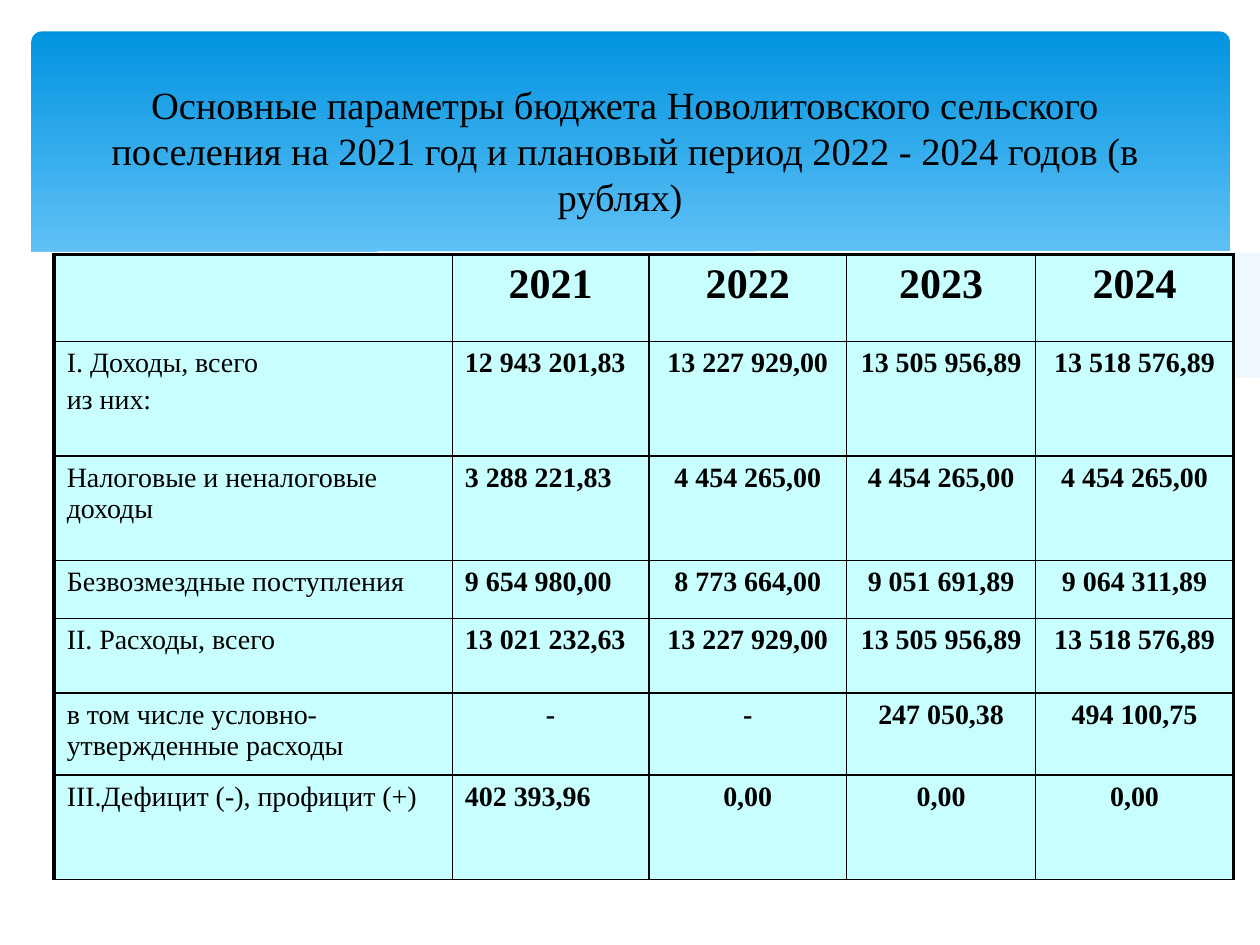
"""Build the budget parameters slide on a grid of 10 columns by 7.5 rows."""
from lxml.etree import SubElement
from pptx import Presentation
from pptx.dml.color import RGBColor
from pptx.enum.shapes import MSO_SHAPE as Shape
from pptx.enum.text import MSO_ANCHOR as Anchor, PP_ALIGN as Align
from pptx.oxml import parse_xml
from pptx.oxml.ns import nsdecls, qn
from pptx.util import Inches, Pt

COLUMNS, ROWS = 10, 7.5
UNIT = Inches(1)
FONT = "Times New Roman"
BLACK = RGBColor(0x00, 0x00, 0x00)
WHITE = RGBColor(0xFF, 0xFF, 0xFF)
SKY_TOP = RGBColor(0x02, 0x93, 0xE0)
SKY_BOTTOM = RGBColor(0x83, 0xD3, 0xFE)
WAVE_TINT = RGBColor(0xC6, 0xE7, 0xFC)
CELL_TINT = RGBColor(0xC8, 0xFE, 0xFD)
THIN, THICK = 1, 2.25

TITLE = ("Основные параметры бюджета Новолитовского сельского поселения "
         "на 2021 год и плановый период 2022 - 2024 годов (в рублях) ")
COLUMN_WIDTHS = [3.16, 1.56, 1.57, 1.5, 1.57]
ROW_HEIGHTS = [0.69, 0.91, 0.83, 0.46, 0.59, 0.65, 0.83]
BUDGET = [
    ["", "2021", "2022", "2023", "2024"],
    ["I. Доходы, всего\nиз них:", "12 943 201,83", "13 227 929,00",
     "13 505 956,89", "13 518 576,89"],
    ["Налоговые и неналоговые доходы", "3 288 221,83", "4 454 265,00",
     "4 454 265,00", "4 454 265,00"],
    ["Безвозмездные поступления", "9 654 980,00", "8 773 664,00",
     "9 051 691,89", "9 064 311,89"],
    ["II. Расходы, всего", "13 021 232,63", "13 227 929,00",
     "13 505 956,89", "13 518 576,89"],
    ["в том числе условно-утвержденные расходы", "-", "-",
     "247 050,38", "494 100,75"],
    ["III.Дефицит (-), профицит (+)", "402 393,96", "0,00", "0,00", "0,00"],
]

RIGHT_WAVE = [
    [(9.76, 2), (9.35, 2.07), (8.61, 2.23), (7.53, 2.48), (6.61, 2.65)],
    [(6.61, 2.65), (7.19, 2.72), (7.81, 2.77), (8.35, 2.77), (8.89, 2.72),
     (9.35, 2.62), (9.76, 2.47)],
]
MIDDLE_WAVE = [
    [(8.93, 2.73), (8.07, 2.6), (7.06, 2.4), (6.29, 2.22), (5.55, 2.05),
     (4.89, 1.94), (4.2, 1.87), (3.61, 1.85), (2.86, 1.91)],
    [(2.86, 1.91), (3.62, 2.03), (4.49, 2.22), (5.66, 2.48), (6.5, 2.64),
     (7.22, 2.74), (7.96, 2.78), (8.48, 2.77), (8.93, 2.73)],
]
LONG_CREST = [[(3.09, 1.95), (3.53, 1.89), (4.16, 1.87), (4.89, 1.9),
               (5.82, 2), (6.65, 2.13), (7.6, 2.33), (9.07, 2.72)]]
SHORT_CREST = [[(6.13, 2.57), (6.95, 2.35), (8.06, 2.1), (8.95, 1.94),
                (9.75, 1.85)]]
WHITE_WAVE = [
    [(9.77, 2.46), (9.2, 2.65), (8.63, 2.74), (8.09, 2.77), (7.44, 2.74),
     (6.68, 2.65), (5.79, 2.5), (4.47, 2.2), (3.65, 2.02), (2.92, 1.9),
     (2.3, 1.85), (1.77, 1.84), (1.19, 1.87), (0.76, 1.95), (0.4, 2.05),
     (0.23, 2.13)],
    [(0.23, 3.29), (9.77, 3.29)],
]


def grid(count):
    """Return the length of a number of grid columns or rows."""
    return round(count * UNIT)


def smooth_curve(knots, steps=5):
    """Return points on a Catmull-Rom curve through the knots."""
    if len(knots) < 3:
        return knots
    padded = [knots[0], *knots, knots[-1]]
    points = []
    for a, b, c, d in zip(padded, padded[1:], padded[2:], padded[3:]):
        for t in (step / steps for step in range(steps)):
            points.append(tuple(
                b[i] + 0.5 * t * (c[i] - a[i] + t * (
                    2 * a[i] - 5 * b[i] + 4 * c[i] - d[i]
                    + t * (3 * (b[i] - c[i]) + d[i] - a[i])))
                for i in (0, 1)))
    return points + [knots[-1]]


def add_wave(page, curves, fill=None, alpha=100):
    """Draw a filled wave, or a hairline crest when no fill is given."""
    points = [point for curve in curves for point in smooth_curve(curve)]
    builder = page.shapes.build_freeform(*points[0], scale=UNIT)
    builder.add_line_segments(points[1:], close=fill is not None)
    wave = builder.convert_to_shape()
    wave.shadow.inherit = False
    if fill is None:
        wave.fill.background()
        wave.line.color.rgb = WHITE
        wave.line.width = Pt(0)
        return
    wave.line.fill.background()
    wave.fill.solid()
    wave.fill.fore_color.rgb = fill
    if alpha < 100:
        color = wave.fill._xPr.find(".//" + qn("a:srgbClr"))
        SubElement(color, qn("a:alpha"), val=str(alpha * 1000))


def add_sky(page):
    """Draw the rounded panel with its vertical gradient."""
    sky = page.shapes.add_shape(Shape.ROUNDED_RECTANGLE, grid(0.25), grid(0.25),
                                grid(9.51), grid(2.7))
    sky.adjustments[0] = 0.03
    sky.shadow.inherit = False
    sky.line.fill.background()
    sky.fill.gradient()
    sky.fill.gradient_angle = 270
    for stop, color, place in zip(sky.fill.gradient_stops,
                                  (SKY_TOP, SKY_BOTTOM), (0, 0.9)):
        stop.color.rgb = color
        stop.position = place


def style_text(frame, size, bold, align):
    """Format every paragraph and run of a text frame."""
    for para in frame.paragraphs:
        para.alignment = align
        for span in para.runs:
            span.font.name = FONT
            span.font.size = Pt(size)
            span.font.bold = bold
            span.font.color.rgb = BLACK


def add_title(page):
    """Add the centred slide title."""
    box = page.shapes.add_textbox(grid(0.59), grid(0.68), grid(8.74), grid(1.02))
    frame = box.text_frame
    frame.word_wrap = True
    frame.vertical_anchor = Anchor.MIDDLE
    frame.text = TITLE
    style_text(frame, 22, False, Align.CENTER)


def space_before(frame, percent):
    """Set the space before each paragraph as a share of its line."""
    for para in frame.paragraphs:
        spacing = SubElement(para._p.get_or_add_pPr(), qn("a:spcBef"))
        SubElement(spacing, qn("a:spcPct"), val=str(percent * 1000))


def set_borders(cell, widths):
    """Give a cell black borders: left, right, top and bottom in points."""
    properties = cell._tc.get_or_add_tcPr()
    for index, (side, width) in enumerate(zip("LRTB", widths)):
        properties.insert(index, parse_xml(
            f'<a:ln{side} {nsdecls("a")} w="{Pt(width)}"><a:solidFill>'
            f'<a:srgbClr val="{BLACK}"/></a:solidFill></a:ln{side}>'))


def fill_cell(cell, row, column):
    """Write and format one budget cell by its place in the table."""
    text = BUDGET[row][column]
    cell.fill.solid()
    cell.fill.fore_color.rgb = CELL_TINT
    set_borders(cell, (THICK if column == 0 else THIN,
                       THICK if column == len(COLUMN_WIDTHS) - 1 else THIN,
                       THICK if row == 0 else THIN, THIN))
    cell.text_frame.text = text
    first_year = row > 0 and column == 1
    left = column == 0 or (first_year and text != "-")
    style_text(cell.text_frame, 16 if row else 24, column > 0,
               Align.LEFT if left else Align.CENTER)
    if not first_year:
        space_before(cell.text_frame, 20)


def add_budget_table(page):
    """Add the table of budget parameters by year."""
    table = page.shapes.add_table(
        len(ROW_HEIGHTS), len(COLUMN_WIDTHS), grid(0.43), grid(2.02),
        grid(sum(COLUMN_WIDTHS)), grid(sum(ROW_HEIGHTS))).table
    table.first_row = table.horz_banding = False
    for column, width in zip(table.columns, COLUMN_WIDTHS):
        column.width = grid(width)
    for row, height in enumerate(ROW_HEIGHTS):
        table.rows[row].height = grid(height)
        for column in range(len(COLUMN_WIDTHS)):
            fill_cell(table.cell(row, column), row, column)


def main():
    """Build and save the deck."""
    deck = Presentation()
    deck.slide_width, deck.slide_height = grid(COLUMNS), grid(ROWS)
    page = deck.slides.add_slide(deck.slide_layouts[6])
    add_sky(page)
    add_wave(page, RIGHT_WAVE, WAVE_TINT, 29)
    add_wave(page, MIDDLE_WAVE, WAVE_TINT, 40)
    add_wave(page, LONG_CREST)
    add_wave(page, SHORT_CREST)
    add_wave(page, WHITE_WAVE, WHITE)
    add_title(page)
    add_budget_table(page)
    deck.save("out.pptx")


if __name__ == "__main__":
    main()
